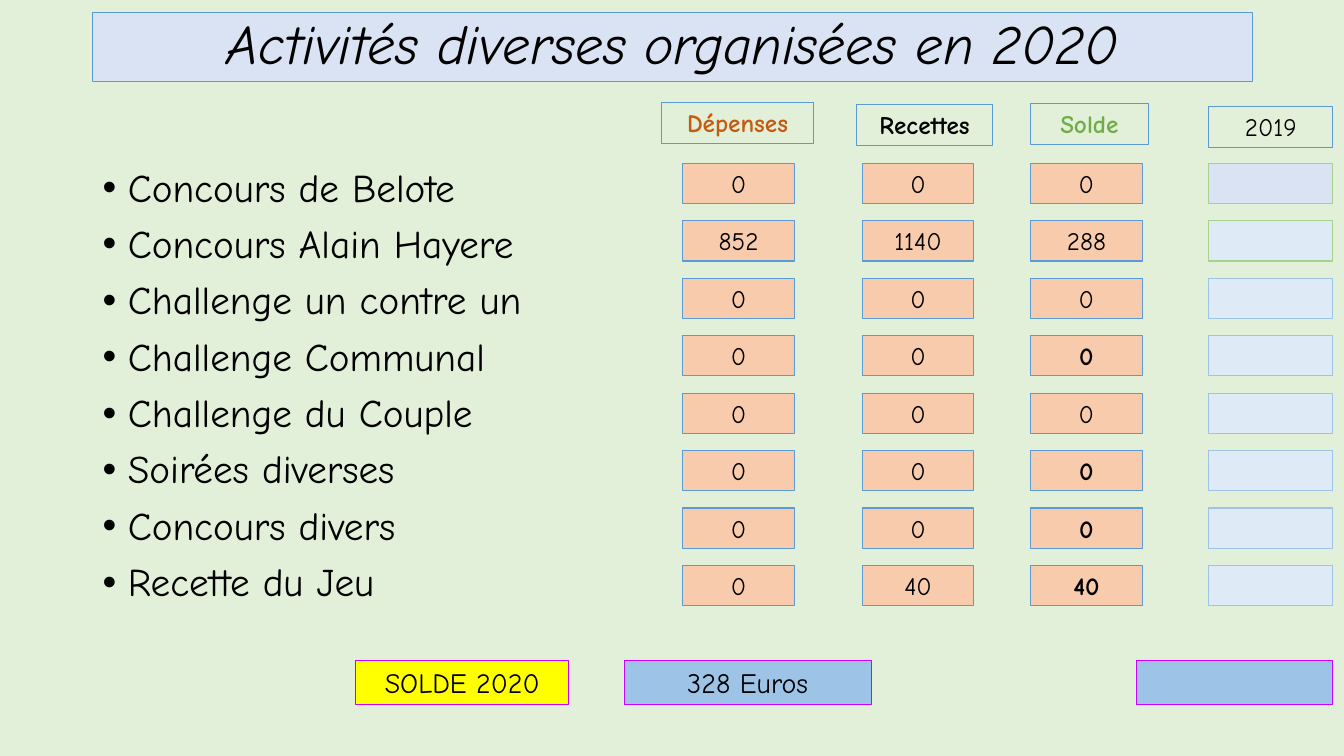
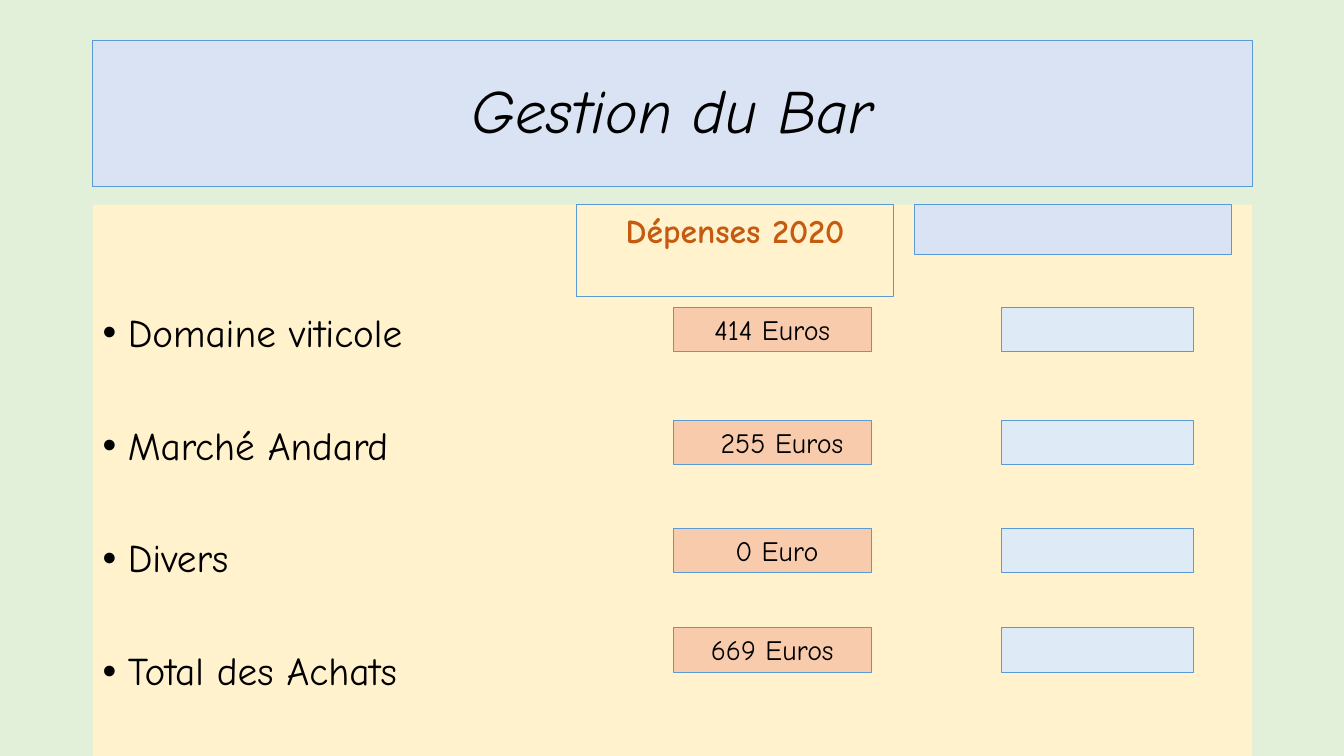
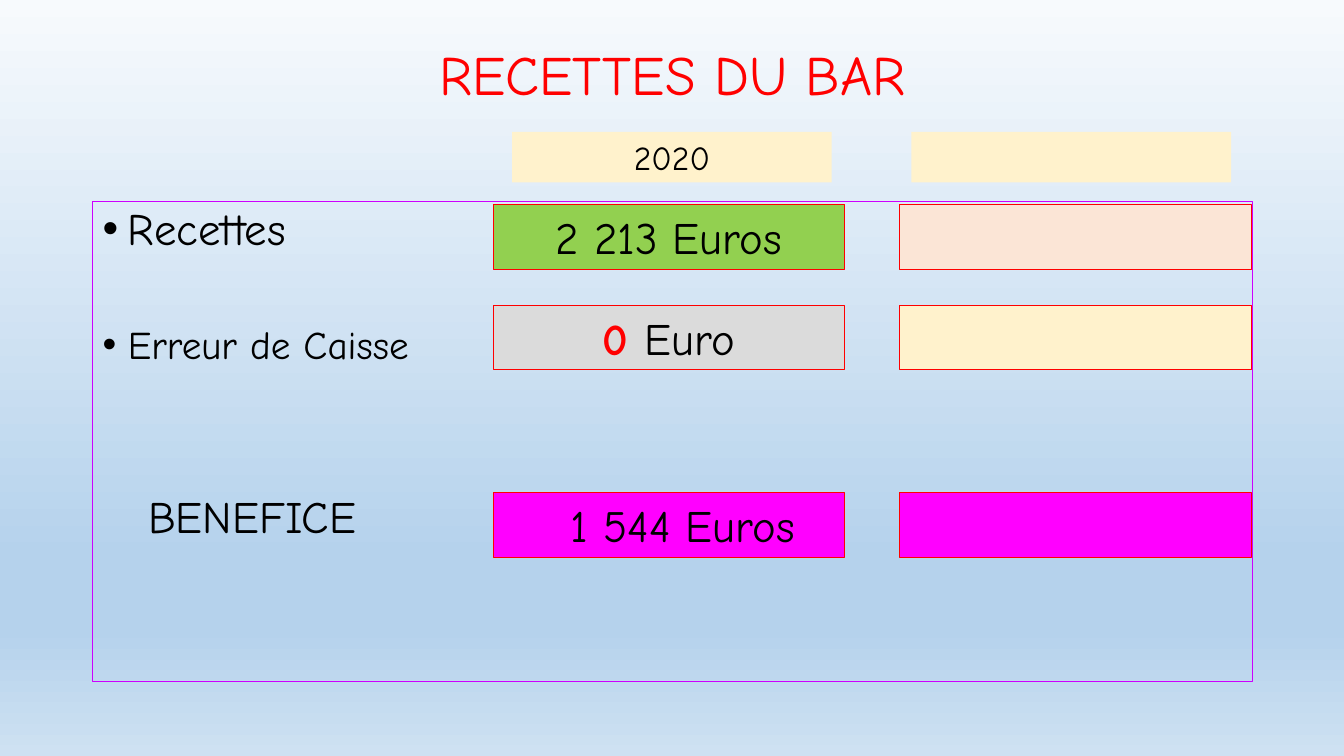
from pptx import Presentation
from pptx.util import Inches, Pt
from pptx.dml.color import RGBColor
from pptx.enum.shapes import MSO_SHAPE
from pptx.enum.text import PP_ALIGN, MSO_ANCHOR
from pptx.oxml.ns import qn
from lxml.etree import SubElement

# Shared style
C = dict(black="000000", red="FF0000", green="70AD47", rust="C55A11", page="E2F0D9",
         band="DAE3F3", peach="F8CBAD", ice="DEEBF7", sky="9DC3E6", cream="FFF2CC",
         blue="5B9BD5", leaf="A9D18E", purple="CC00FF", yellow="FFFF00", lime="92D050",
         grey="DBDBDB", magenta="FF00FF", blush="FBE5D6")
FONT = "Comic Neue"
LEFT, WIDTH = 0.92, 11.5
TITLE = dict(line_spacing=0.9)

prs = Presentation()
prs.slide_width, prs.slide_height = Inches(13.33), Inches(7.5)


def add_box(s, x, y, w, h, runs=(), fill=None, line="blue", size=18, shift=0,
            anchor=MSO_ANCHOR.TOP, para=None):
    """Rectangle with one centred line; runs are (text, colour, font values)."""
    sp = s.shapes.add_shape(MSO_SHAPE.RECTANGLE, *map(Inches, (x, y, w, h)))
    sp.shadow.inherit = False
    for target, colour in ((sp.fill, fill), (sp.line.fill, line)):
        if colour:
            target.solid()
            target.fore_color.rgb = RGBColor.from_string(C[colour])
        else:
            target.background()
    if line:
        sp.line.width = Pt(0.75)
    tf = sp.text_frame
    tf.word_wrap, tf.vertical_anchor = True, anchor
    tf.margin_left = Inches(0.1 + shift)
    p = tf.paragraphs[0]
    for name, value in {"alignment": PP_ALIGN.CENTER, **(para or {})}.items():
        setattr(p, name, value)
    for text, colour, extra in runs:
        r = p.add_run()
        r.text = text
        r.font.color.rgb = RGBColor.from_string(C[colour])
        for name, value in {"name": FONT, "size": Pt(size), **extra}.items():
            setattr(r.font, name, value)
    return sp


def fill_list(sp, items, top=0.05):
    """List lines; items are (text, size, space before, indent, bulleted)."""
    tf = sp.text_frame
    tf.word_wrap, tf.margin_left, tf.margin_top = True, Inches(0.1), Inches(top)
    for i, (text, size, before, indent, bulleted) in enumerate(items):
        p = tf.add_paragraph() if i else tf.paragraphs[0]
        for name, value in dict(alignment=PP_ALIGN.LEFT, line_spacing=0.9,
                                space_before=Pt(before)).items():
            setattr(p, name, value)
        pPr = p._p.get_or_add_pPr()
        pPr.set("marL", str(Inches(indent)))
        pPr.set("indent", str(-Inches(indent) if bulleted else 0))
        if bulleted:
            SubElement(pPr, qn("a:buFont")).set("typeface", "Arial")
            SubElement(pPr, qn("a:buChar")).set("char", "•")
        r = p.add_run()
        r.text = text
        r.font.color.rgb = RGBColor.from_string(C["black"])
        for name, value in dict(name=FONT, size=Pt(size)).items():
            setattr(r.font, name, value)


slides = [prs.slides.add_slide(prs.slide_layouts[6]) for _ in range(3)]
for s in slides[:2]:
    s.background.fill.solid()
    s.background.fill.fore_color.rgb = RGBColor.from_string(C["page"])

# Titles
titles = [("Activités diverses organisées en 2020", 0.12, 0.69, 39.6, "band", "blue", "black", True),
          ("Gestion du Bar", 0.4, 1.45, 44, "band", "blue", "black", True),
          ("RECETTES DU BAR", 0.4, 0.74, 39.6, None, None, "red", False)]
for s, (text, y, h, size, fill, line, colour, italic) in zip(slides, titles):
    add_box(s, LEFT, y, WIDTH, h, [(text, colour, dict(italic=italic))], fill, line, size,
            anchor=MSO_ANCHOR.MIDDLE, para=TITLE)

# Slide 1: activities
s = slides[0]
activities = ["Concours de Belote", "Concours Alain Hayere", "Challenge un contre un",
              "Challenge Communal", "Challenge du Couple", "Soirées diverses",
              "Concours divers", "Recette du Jeu"]
body = s.shapes.add_textbox(*map(Inches, (LEFT, 1.62, 5.5, 5.19)))
fill_list(body, [(text, 28, 10, 0.25, True) for text in activities])

ROW_TOP, ROW_STEP, CELL_H = 1.62, 0.57, 0.4
heads = [("Dépenses", 6.56, 1.02, 1.51, "rust", True), ("Recettes", 8.5, 1.04, 1.34, "black", True),
         ("Solde", 10.22, 1.03, 1.17, "green", True), ("2019", 11.99, 1.06, 1.23, "black", False)]
for text, x, y, w, colour, bold in heads:
    add_box(s, x, y, w, CELL_H, [(text, colour, dict(bold=bold))])

columns = [(6.77, [0, 852, 0, 0, 0, 0, 0, 0], ()),
           (8.55, [0, 1140, 0, 0, 0, 0, 0, 40], ()),
           (10.22, [0, 288, 0, 0, 0, 0, 0, 40], (3, 5, 6, 7))]
for x, values, bold_rows in columns:
    for row, value in enumerate(values):
        add_box(s, x, ROW_TOP + row * ROW_STEP, 1.11, CELL_H,
                [(str(value), "black", dict(bold=row in bold_rows))], "peach")
for row in range(len(activities)):
    add_box(s, 11.99, ROW_TOP + row * ROW_STEP, 1.23, CELL_H,
            fill="ice" if row else "band", line="sky" if row > 1 else "leaf")

for text, x, w, fill in [("SOLDE 2020", 3.53, 2.11, "yellow"), ("328 Euros", 6.19, 2.45, "sky"),
                         ("", 11.27, 1.95, "sky")]:
    add_box(s, x, 6.55, w, 0.44, [(text, "black", {})] if text else (), fill, "purple", 20)

# Slide 2: bar purchases
s = slides[1]
purchases = [("Domaine viticole", "414 Euros", 3.05, 0), ("Marché Andard", "255 Euros", 4.17, 0.19),
             ("Divers", "0 Euro", 5.24, 0.09), ("Total des Achats", "669 Euros", 6.23, 0)]
body = add_box(s, LEFT, 2.03, WIDTH, 5.47, fill="cream", line=None)
fill_list(body, [(row[0], 28, 50.3 if i else 10, 0.25, True) for i, row in enumerate(purchases)], 1.08)
add_box(s, 5.72, 2.03, 3.14, 0.91, [("Dépenses 2020", "rust", dict(bold=True))], size=24)
add_box(s, 9.07, 2.03, 3.14, 0.5, fill="band")
for _, amount, y, shift in purchases:
    add_box(s, 6.68, y, 1.96, 0.44, [(amount, "black", {})], "peach", size=20, shift=shift)
    add_box(s, 9.93, y, 1.91, 0.44, fill="ice")

# Slide 3: bar takings, on a vertical gradient
s = slides[2]
s.background.fill.gradient()
grad = s._element.find(".//" + qn("a:gradFill"))
stops = grad.find(qn("a:gsLst"))
for stop in list(stops):
    stops.remove(stop)
for share, colour in [(0, "F7FAFD"), (74, "B5D2EC"), (83, "B5D2EC"), (100, "CEE1F2")]:
    stop = SubElement(stops, qn("a:gs"))
    stop.set("pos", str(share * 1000))
    SubElement(stop, qn("a:srgbClr")).set("val", colour)
grad.find(qn("a:lin")).set("ang", "5400000")

body = add_box(s, LEFT, 2, WIDTH, 4.76, line="purple")
fill_list(body, [("Recettes", 32, 10, 0.25, True), ("Erreur de Caisse", 28, 50.3, 0.25, True),
                 ("BENEFICE", 32, 90.6, 0.45, False)])
add_box(s, 5.08, 1.31, 3.17, 0.5, [("2020", "black", {})], "cream", None, 24)
add_box(s, 9.04, 1.31, 3.17, 0.5, fill="cream", line=None)
takings = [(2.03, [("2 213 Euros", "black", {})], "lime", "blush", 0),
           (3.03, [("0 ", "red", dict(bold=True)), ("Euro", "black", {})], "grey", "cream", 0),
           (4.89, [("1 544 Euros", "black", {})], "magenta", "magenta", 0.27)]
for y, runs, fill, fill_before, shift in takings:
    add_box(s, 4.89, y, 3.49, 0.64, runs, fill, "red", 32, shift)
    add_box(s, 8.92, y, 3.49, 0.64, fill=fill_before, line="red")

prs.save("out.pptx")
